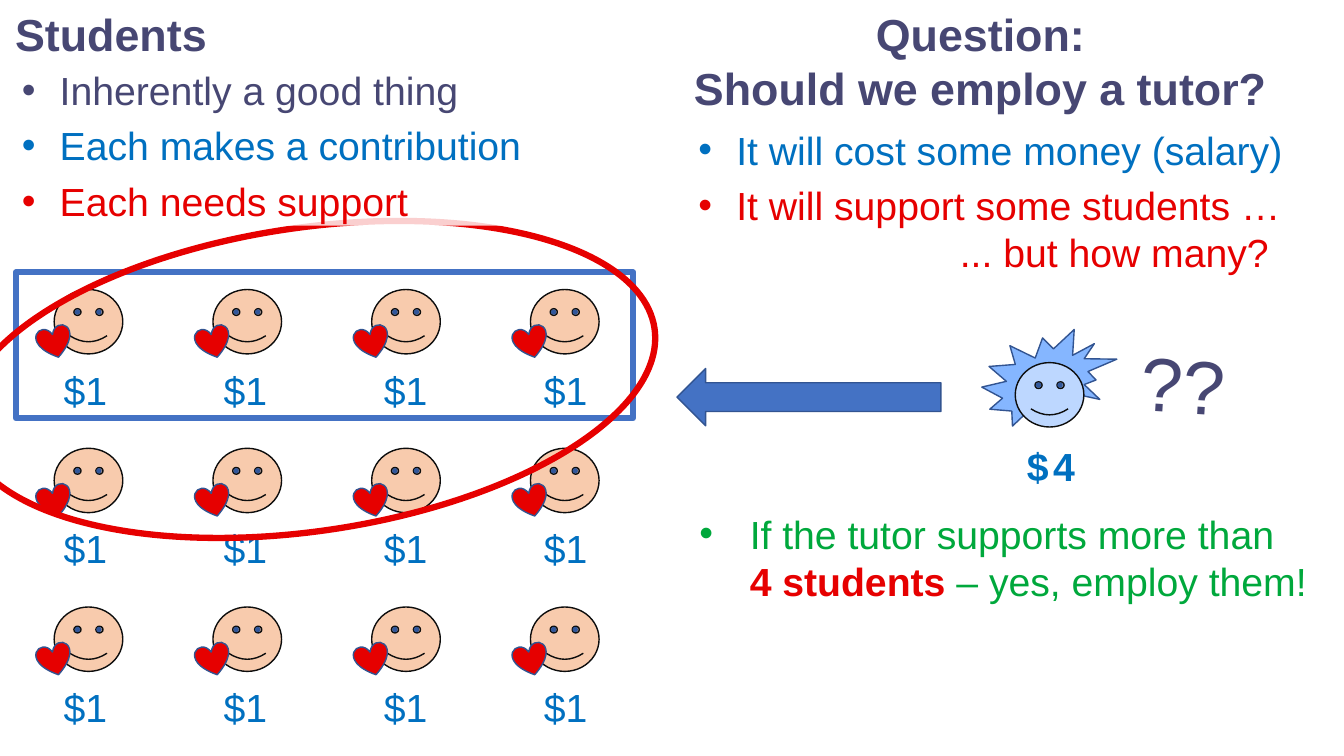
from dataclasses import dataclass
from itertools import product
from typing import Optional

from lxml.etree import SubElement
from pptx import Presentation
from pptx.dml.color import RGBColor
from pptx.enum.shapes import MSO_SHAPE as Preset
from pptx.enum.text import MSO_ANCHOR as Anchor, PP_ALIGN as Align
from pptx.oxml.ns import qn
from pptx.util import Pt

COLOURS = {
    "navy": "474773", "blue": "0070C0", "red": "E60000", "green": "00A83C",
    "skin": "F8CBAD", "pale blue": "BDD7FF", "hair": "85B6FF", "eye": "31579B",
    "outline": "0D0D0D", "edge": "325491", "frame": "4472C4", "white": "FFFFFF",
}
FONT = "Arial"
COLUMNS, ROWS = 4, 3
PITCH = 113.4
LABEL_PITCH = 114.3


@dataclass(frozen=True)
class Box:
    left: float
    top: float
    width: float
    height: float
    rotation: float = 0


@dataclass(frozen=True)
class Style:
    fill: Optional[str] = None
    line: Optional[str] = None
    line_width: float = 1


@dataclass(frozen=True)
class Words:
    text: str
    colour: str
    size: float = 28
    bold: bool = False


@dataclass(frozen=True)
class Line:
    """A paragraph: its runs ("\\n" in a run's text breaks the line) and layout."""
    words: tuple[Words, ...]
    bullet_indent: float = 0
    left_margin: float = 0
    space_before: float = 0
    align: Align = Align.LEFT


def rgb(name: str) -> RGBColor:
    return RGBColor.from_string(COLOURS[name])


def place(shape, box: Box) -> None:
    shape.left, shape.top = Pt(box.left), Pt(box.top)
    shape.width, shape.height = Pt(box.width), Pt(box.height)
    shape.rotation = box.rotation


def draw(shapes, preset: Preset, box: Box, style: Style):
    shape = shapes.add_shape(preset, 0, 0, 0, 0)
    place(shape, box)
    shape.shadow.inherit = False
    if style.fill:
        shape.fill.solid()
        shape.fill.fore_color.rgb = rgb(style.fill)
    else:
        shape.fill.background()
    if style.line:
        shape.line.color.rgb = rgb(style.line)
        shape.line.width = Pt(style.line_width)
    else:
        shape.line.fill.background()
    return shape


def set_indent(paragraph, line: Line) -> None:
    properties = paragraph._p.get_or_add_pPr()
    if line.bullet_indent:
        properties.set("marL", str(Pt(line.bullet_indent)))
        properties.set("indent", str(-Pt(line.bullet_indent)))
        SubElement(properties, qn("a:buFont"), typeface=FONT)
        SubElement(properties, qn("a:buChar"), char="•")
    elif line.left_margin:
        properties.set("marL", str(Pt(line.left_margin)))
        properties.set("indent", "0")


def write(shape, lines: list[Line], anchor: Anchor = Anchor.TOP) -> None:
    frame = shape.text_frame
    frame.word_wrap = True
    frame.vertical_anchor = anchor
    for index, line in enumerate(lines):
        paragraph = frame.add_paragraph() if index else frame.paragraphs[0]
        paragraph.alignment = line.align
        paragraph.space_before = Pt(line.space_before)
        set_indent(paragraph, line)
        for words in line.words:
            for part, text in enumerate(words.text.split("\n")):
                if part:
                    paragraph.add_line_break()
                if not text:
                    continue
                run = paragraph.add_run()
                run.text = text
                run.font.name = FONT
                run.font.size = Pt(words.size)
                run.font.bold = words.bold
                run.font.color.rgb = rgb(words.colour)


def add_text(shapes, box: Box, lines: list[Line]):
    text_box = shapes.add_textbox(0, 0, 0, 0)
    place(text_box, box)
    write(text_box, lines)
    return text_box


def bullet(text: str, colour: str) -> Line:
    return Line((Words(text, colour),), bullet_indent=27, space_before=6)


def draw_face(shapes, left: float, top: float, fill: str) -> None:
    face = draw(shapes, Preset.SMILEY_FACE, Box(left, top, 49, 46), Style(fill, "outline"))
    face.adjustments[0] = 0.047
    for eye_offset in (14.7, 30.1):
        draw(shapes, Preset.OVAL, Box(left + eye_offset, top + 14.2, 3.8, 3.8), Style("eye"))


def draw_student(shapes, column: int, row: int) -> None:
    left, top = 38.7 + column * PITCH, 206.8 + row * PITCH
    student = shapes.add_group_shape().shapes
    draw_face(student, left, top, "skin")
    draw(student, Preset.HEART, Box(left - 12, top + 26.4, 24.5, 22.3, -14.8),
         Style("red", "edge"))


def label_row(shapes, row: int) -> None:
    """Write one contribution under each student of a row, set on tab stops."""
    labels = add_text(shapes, Box(38.4, 257.8 + row * PITCH, 417, 41),
                      [Line((Words("\t".join(["$1"] * COLUMNS), "blue"),))])
    properties = labels.text_frame.paragraphs[0]._p.get_or_add_pPr()
    tab_list = SubElement(properties, qn("a:tabLst"))
    for column in range(1, COLUMNS):
        SubElement(tab_list, qn("a:tab"), pos=str(Pt(column * LABEL_PITCH)), algn="l")


def draw_students(shapes) -> None:
    for row, column in product(range(ROWS), range(COLUMNS)):
        draw_student(shapes, column, row)
    for row in range(ROWS):
        label_row(shapes, row)


def draw_tutor(shapes) -> None:
    tutor = shapes.add_group_shape().shapes
    draw(tutor, Preset.EXPLOSION2, Box(701.3, 235.4, 96.5, 69), Style("hair", "edge"))
    draw_face(tutor, 725.2, 259, "pale blue")
    add_text(shapes, Box(807.8, 237.6, 75.6, 72.7, 3.5),
             [Line((Words("??", "navy", 54),), space_before=6)])
    add_text(shapes, Box(726.5, 312.5, 62, 41), [Line((
        Words("$", "blue", bold=True), Words(" ", "blue", 11, True),
        Words("4", "blue", bold=True)))])


def write_question(shapes) -> None:
    add_text(shapes, Box(456.3, 1.4, 488.2, 85), [
        Line((Words(text, "navy", 32, True),), align=Align.CENTER)
        for text in ("Question:", "Should we employ a tutor?")])
    add_text(shapes, Box(491.8, 86.4, 461.5, 115.2), [
        bullet("It will cost some money (salary)", "blue"),
        bullet("It will support some students …", "red"),
        Line((Words("... but how many?", "red"),), left_margin=186.7)])


def write_answer(shapes) -> None:
    add_text(shapes, Box(492.5, 360.7, 484.6, 74.9), [Line((
        Words("If the tutor supports more than\n", "green"),
        Words("4 students ", "red", bold=True),
        Words("– yes, employ them!", "green")), bullet_indent=36, space_before=6)])


def write_student_facts(shapes) -> None:
    panel = draw(shapes, Preset.RECTANGLE, Box(8.6, 46.1, 388.8, 115.2), Style("white"))
    colour = panel.fill._xPr.find(".//" + qn("a:srgbClr"))
    SubElement(colour, qn("a:alpha"), val="81000")
    write(panel, [bullet("Inherently a good thing", "navy"),
                  bullet("Each makes a contribution", "blue"),
                  bullet("Each needs support", "red")], Anchor.MIDDLE)


def main() -> None:
    presentation = Presentation()
    presentation.slide_width, presentation.slide_height = Pt(960), Pt(540)
    slide = presentation.slides.add_slide(presentation.slide_layouts[5])
    shapes = slide.shapes
    place(shapes.title, Box(3.6, 1.4, 203, 46))
    write(shapes.title, [Line((Words("Students", "navy", 32, True),))])
    draw_students(shapes)
    draw_tutor(shapes)
    write_question(shapes)
    draw(shapes, Preset.RECTANGLE, Box(11.5, 194.4, 440.6, 104.4), Style(None, "frame", 4.5))
    draw(shapes, Preset.DOWN_ARROW, Box(557.3, 189.4, 41, 188.6, 90), Style("frame", "edge"))
    write_answer(shapes)
    draw(shapes, Preset.OVAL, Box(-28.8, 162.7, 499, 216.7, -8.4), Style(None, "red", 4.5))
    write_student_facts(shapes)
    presentation.save("out.pptx")


if __name__ == "__main__":
    main()
